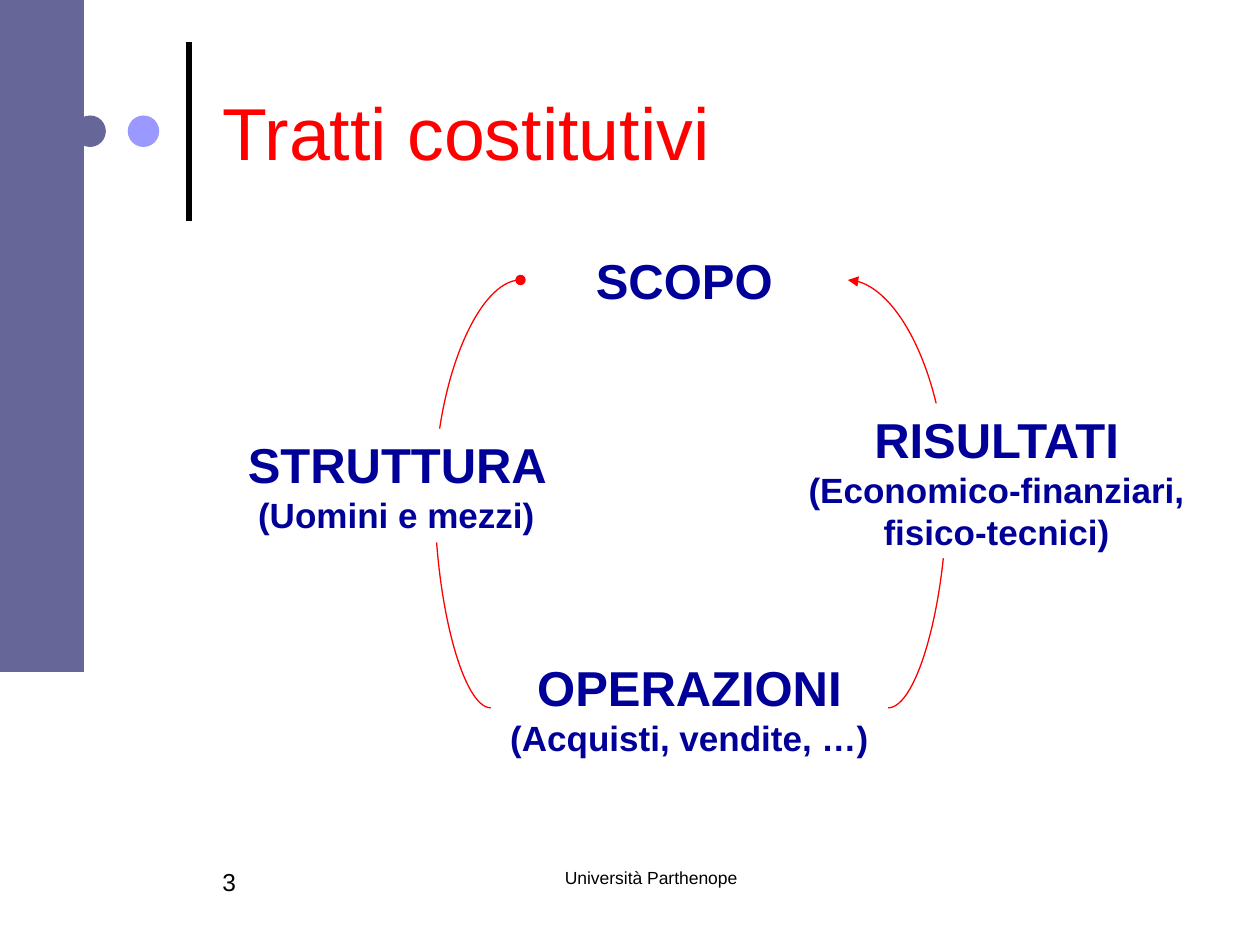
from lxml.etree import SubElement
from pptx import Presentation
from pptx.dml.color import RGBColor
from pptx.enum.shapes import MSO_CONNECTOR, MSO_SHAPE
from pptx.enum.text import MSO_ANCHOR, MSO_AUTO_SIZE, PP_ALIGN
from pptx.oxml.ns import qn
from pptx.util import Pt

COLORS = {
    "title": "FF0000",
    "arc": "FF0000",
    "label": "000099",
    "text": "000000",
    "band": "666699",
    "dot": "9999FF",
    "background": "FFFFFF",
}
HEADING = {"size": Pt(28), "bold": True}
DETAIL = {"size": Pt(20), "bold": True}
TOP_SITE, LEFT_SITE, BOTTOM_SITE, RIGHT_SITE = range(4)


def rgb(name):
    return RGBColor.from_string(COLORS[name])


def add_filled_shape(slide, kind, box, color):
    shape = slide.shapes.add_shape(kind, *map(Pt, box))
    shape.shadow.inherit = False
    shape.fill.solid()
    shape.fill.fore_color.rgb = rgb(color)
    shape.line.fill.background()
    return shape


def write_text(shape, runs, color, align=PP_ALIGN.LEFT, **frame_format):
    """Fill a shape with one paragraph; runs are (text, font format) pairs."""
    frame = shape.text_frame
    frame_values = {"word_wrap": True, "vertical_anchor": MSO_ANCHOR.TOP}
    for name, value in {**frame_values, **frame_format}.items():
        setattr(frame, name, value)
    paragraph = frame.paragraphs[0]
    paragraph.alignment = align
    for text, font_format in runs:
        run = paragraph.add_run()
        run.text = text
        run.font.color.rgb = rgb(color)
        for name, value in {"name": "Arial", **font_format}.items():
            setattr(run.font, name, value)


def add_text(slide, box, *text_arguments, **text_format):
    shape = slide.shapes.add_textbox(*map(Pt, box))
    write_text(shape, *text_arguments, **text_format)
    return shape


def add_stage(slide, box, heading, detail="", masks_arc=False):
    """Add a cycle label; a masking one hides the arc that runs behind it."""
    runs = [(heading, HEADING)]
    if detail:
        runs = [(heading + " ", HEADING), (detail, DETAIL)]
    if masks_arc:
        shape = add_filled_shape(slide, MSO_SHAPE.RECTANGLE, box, "background")
    else:
        shape = slide.shapes.add_textbox(*map(Pt, box))
    write_text(shape, runs, "label", PP_ALIGN.CENTER,
               auto_size=MSO_AUTO_SIZE.SHAPE_TO_FIT_TEXT)
    return shape


def add_connector(slide, kind, start, end, color, width):
    connector = slide.shapes.add_connector(kind, *map(Pt, (*start, *end)))
    SubElement(connector._element.spPr, qn("a:effectLst"))
    connector.line.color.rgb = rgb(color)
    connector.line.width = Pt(width)
    return connector


def add_arc(slide, start_shape, end_shape, site, bulge_x, head):
    """Join the same side of two shapes with a curve that swings out to bulge_x."""
    connector = add_connector(slide, MSO_CONNECTOR.CURVE, (0, 0), (0, 0), "arc", 0.75)
    connector.begin_connect(start_shape, site)
    connector.end_connect(end_shape, site)
    span = connector.end_x - connector.begin_x
    bulge = round((Pt(bulge_x) - connector.begin_x) / span * 100000)
    guides = connector._element.spPr.find(qn("a:prstGeom")).get_or_add_avLst()
    SubElement(guides, qn("a:gd"), name="adj1", fmla=f"val {bulge}")
    line = connector.line._get_or_add_ln()
    SubElement(line, qn("a:headEnd"), type=head, w="med", len="med")


def add_decoration(slide):
    add_connector(slide, MSO_CONNECTOR.STRAIGHT, (108, 126), (108, 24), "text", 3)
    for left, color in ((42.5, "band"), (73, "dot")):
        add_filled_shape(slide, MSO_SHAPE.OVAL, (left, 66, 18, 18), color)
    add_filled_shape(slide, MSO_SHAPE.RECTANGLE, (0, 0, 48, 384), "band")


def add_cycle(slide):
    purpose = add_stage(slide, (297.5, 139.5, 187, 41), "SCOPO")
    operations = add_stage(slide, (280.5, 372, 227, 65),
                           "OPERAZIONI", "(Acquisti, vendite, …)")
    add_arc(slide, purpose, operations, RIGHT_SITE, 541, "triangle")
    add_arc(slide, purpose, operations, LEFT_SITE, 248.5, "oval")
    add_stage(slide, (133, 245, 187, 65),
              "STRUTTURA", "(Uomini e mezzi)", masks_arc=True)
    add_stage(slide, (445, 230.5, 249, 88.5),
              "RISULTATI", "(Economico-finanziari, fisico-tecnici)", masks_arc=True)


def main():
    presentation = Presentation()
    presentation.slide_width, presentation.slide_height = Pt(720), Pt(540)
    slide = presentation.slides.add_slide(presentation.slide_layouts[6])
    add_decoration(slide)
    add_text(slide, (258, 492, 228, 36), [("Università Parthenope", {"size": Pt(10)})],
             "text", PP_ALIGN.CENTER)
    add_text(slide, (120, 492, 102, 36), [("3", {"size": Pt(14)})], "text")
    add_text(slide, (120, 15, 552, 120), [("Tratti costitutivi", {"size": Pt(42)})],
             "title", vertical_anchor=MSO_ANCHOR.MIDDLE)
    add_cycle(slide)
    presentation.save("out.pptx")


if __name__ == "__main__":
    main()
